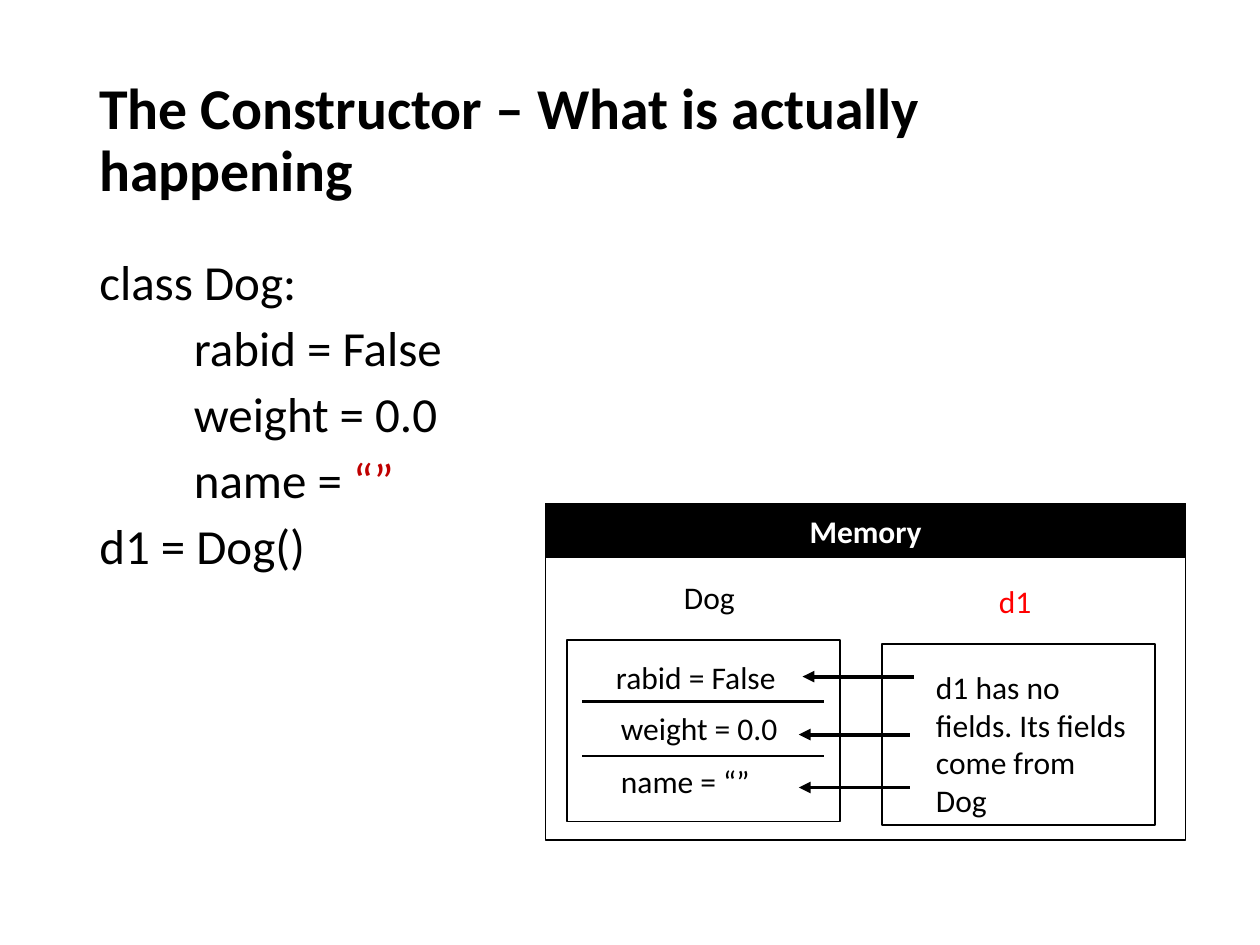
from dataclasses import dataclass
from typing import Any, Optional

from lxml.etree import SubElement
from pptx import Presentation
from pptx.dml.color import RGBColor
from pptx.enum.shapes import MSO_CONNECTOR as Conn, MSO_SHAPE as Shape
from pptx.enum.text import MSO_ANCHOR as Anchor, PP_ALIGN as Align
from pptx.oxml.ns import qn
from pptx.util import Pt

PX = 9144
BLACK = RGBColor(0, 0, 0)
WHITE = RGBColor(255, 255, 255)
RED = RGBColor(255, 0, 0)
DARK_RED = RGBColor(192, 0, 0)

TITLE = {"size": Pt(33), "bold": True}
CODE = {"size": Pt(28)}
LABEL = {"size": Pt(18)}
HEADER = {"size": Pt(18), "bold": True}
CODE_PARA = {"line_spacing": 0.9, "space_before": Pt(7.5)}


@dataclass
class Box:
    x: int
    y: int
    w: int
    h: int
    fill: Optional[RGBColor] = None


@dataclass
class Label:
    text: str
    x: int
    y: int
    w: int
    h: int = 40
    color: RGBColor = BLACK


@dataclass
class Line:
    x1: int
    x2: int
    y: int
    width: float
    arrow: bool = False


def set_all(obj: Any, values: dict) -> None:
    for name, value in values.items():
        setattr(obj, name, value)


def add_run(p: Any, text: str, fmt: dict, color: RGBColor = BLACK) -> None:
    r = p.add_run()
    r.text = text
    set_all(r.font, {"name": "Calibri", **fmt})
    r.font.color.rgb = color


def add_text(s: Any, label: Label) -> Any:
    sp = s.shapes.add_textbox(*(v * PX for v in (label.x, label.y, label.w, label.h)))
    tf = sp.text_frame
    tf.word_wrap = True
    return tf


def draw_label(s: Any, label: Label, fmt: dict = LABEL) -> Any:
    tf = add_text(s, label)
    add_run(tf.paragraphs[0], label.text, fmt, label.color)
    return tf


def draw_box(s: Any, box: Box) -> Any:
    sp = s.shapes.add_shape(Shape.RECTANGLE, *(v * PX for v in (box.x, box.y, box.w, box.h)))
    sp.shadow.inherit = False
    if box.fill is None:
        sp.fill.background()
    else:
        sp.fill.solid()
        sp.fill.fore_color.rgb = box.fill
    sp.line.color.rgb = BLACK
    sp.line.width = Pt(1)
    return sp


def draw_line(s: Any, line: Line) -> None:
    sp = s.shapes.add_connector(
        Conn.STRAIGHT, line.x1 * PX, line.y * PX, line.x2 * PX, line.y * PX)
    sp.line.color.rgb = BLACK
    sp.line.width = Pt(line.width)
    if line.arrow:
        SubElement(sp.line._get_or_add_ln(), qn("a:tailEnd"), type="triangle")
    SubElement(sp._element.spPr, qn("a:effectLst"))


def draw_code(s: Any, area: Label, lines: list) -> None:
    tf = add_text(s, area)
    for i, runs in enumerate(lines):
        p = tf.paragraphs[0] if i == 0 else tf.add_paragraph()
        tabs = SubElement(p._p.get_or_add_pPr(), qn("a:tabLst"))
        SubElement(tabs, qn("a:tab"), pos=str(75 * PX), algn="l")
        set_all(p, CODE_PARA)
        if i == 0:
            p.space_before = Pt(0)
        for text, color in runs:
            add_run(p, text, CODE, color)


CODE_LINES = [
    [("class Dog:", BLACK)],
    [("\trabid = False", BLACK)],
    [("\tweight = 0.0", BLACK)],
    [("\tname = ", BLACK), ("“”", DARK_RED)],
    [("d1 = Dog()", BLACK)],
]
MEMORY = Box(433, 400, 508, 267)
MEMORY_HEADER = Box(433, 400, 508, 42, BLACK)
OBJECTS = [Box(450, 508, 217, 144), Box(700, 511, 217, 144)]
LABELS = [
    Label("Dog", 533, 454, 67),
    Label("d1", 783, 457, 67, color=RED),
    Label("rabid = False", 479, 517, 158),
    Label("weight = 0.0", 483, 558, 150),
    Label("name = “”", 483, 600, 150),
    Label("d1 has no fields. Its fields come from Dog", 733, 525, 171, 131),
]
DIVIDERS = [Line(462, 654, y, 1.5) for y in (557, 600)]
ARROWS = [Line(x, x - 88, y, 2.25, True) for x, y in ((725, 537), (722, 583), (722, 625))]


def main() -> None:
    prs = Presentation()
    set_all(prs, {"slide_width": 1000 * PX, "slide_height": 750 * PX})
    s = prs.slides.add_slide(prs.slide_layouts[6])

    title = Label("The Constructor – What is actually happening", 69, 40, 862, 145)
    tf = draw_label(s, title, TITLE)
    tf.vertical_anchor = Anchor.MIDDLE
    tf.paragraphs[0].line_spacing = 0.9
    draw_code(s, Label("", 69, 200, 862, 476), CODE_LINES)

    draw_box(s, MEMORY)
    tf = draw_box(s, MEMORY_HEADER).text_frame
    tf.vertical_anchor = Anchor.MIDDLE
    tf.paragraphs[0].alignment = Align.CENTER
    add_run(tf.paragraphs[0], "Memory", HEADER, WHITE)

    for box in OBJECTS:
        draw_box(s, box)
    for label in LABELS:
        draw_label(s, label)
    for line in DIVIDERS + ARROWS:
        draw_line(s, line)
    prs.save("out.pptx")


if __name__ == "__main__":
    main()
